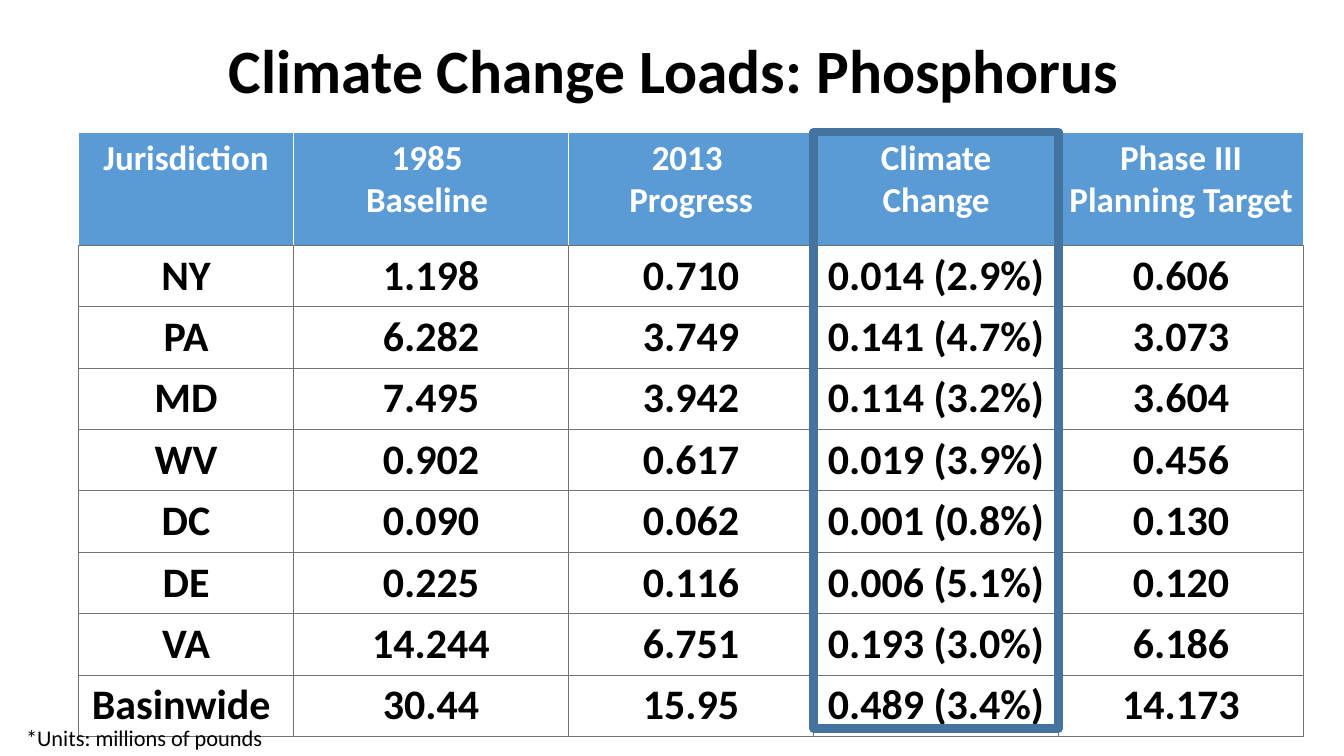
from dataclasses import dataclass

from lxml.etree import SubElement
from pptx import Presentation
from pptx.dml.color import RGBColor
from pptx.enum.shapes import MSO_SHAPE
from pptx.enum.text import MSO_ANCHOR, PP_ALIGN
from pptx.oxml.ns import qn
from pptx.slide import Slide
from pptx.table import _Cell as Cell
from pptx.text.text import TextFrame
from pptx.util import Pt


@dataclass(frozen=True)
class Theme:
    font: str = "Calibri"
    black: str = "000000"
    white: str = "FFFFFF"
    blue: str = "5B9BD5"
    frame: str = "43739E"
    grid: str = "767171"
    title: float = 44
    head: float = 25
    body: float = 30
    note: float = 16


@dataclass(frozen=True)
class Box:
    left: float
    top: float
    width: float
    height: float

    def pts(self) -> tuple[Pt, Pt, Pt, Pt]:
        return Pt(self.left), Pt(self.top), Pt(self.width), Pt(self.height)


@dataclass(frozen=True)
class Style:
    size: float
    color: str
    bold: bool = True
    align: PP_ALIGN = PP_ALIGN.CENTER
    spacing: float = 1.0


@dataclass(frozen=True)
class Edge:
    color: str
    width: float


@dataclass(frozen=True)
class Look:
    text: Style
    fill: str
    edges: dict[str, Edge]


@dataclass(frozen=True)
class Label:
    text: str
    box: Box
    style: Style
    anchor: MSO_ANCHOR


THEME = Theme()
WHITE = Edge(THEME.white, 1)
GRID = Edge(THEME.grid, 0.5)
HEAD = Look(Style(THEME.head, THEME.white), THEME.blue,
            {"L": WHITE, "R": WHITE, "T": WHITE, "B": GRID})
BODY = Look(Style(THEME.body, THEME.black), THEME.white,
            {side: GRID for side in "LRTB"})

COLS = [153.4, 196.6, 175, 175, 175]
HEAD_H, ROW_H = 80.8, 40.3
ROWS = [
    ["Jurisdiction", "1985 \nBaseline ", "2013 \nProgress",
     "Climate Change", "Phase III Planning Target"],
    ["NY", "1.198", "0.710", "0.014 (2.9%)", "0.606"],
    ["PA", "6.282", "3.749", "0.141 (4.7%)", "3.073"],
    ["MD", "7.495", "3.942", "0.114 (3.2%)", "3.604"],
    ["WV", "0.902", "0.617", "0.019 (3.9%)", "0.456"],
    ["DC", "0.090", "0.062", "0.001 (0.8%)", "0.130"],
    ["DE", "0.225", "0.116", "0.006 (5.1%)", "0.120"],
    ["VA", "14.244", "6.751", "0.193 (3.0%)", "6.186"],
    ["Basinwide ", "30.44", "15.95", "0.489 (3.4%)", "14.173"],
]
GRID_BOX = Box(56.2, 94.3, sum(COLS), HEAD_H + ROW_H * (len(ROWS) - 1))
FOCUS = ROWS[0].index("Climate Change")

LABELS = [
    Label("Climate Change Loads: Phosphorus", Box(67.7, 0, 828, 104.4),
          Style(THEME.title, THEME.black, spacing=0.9), MSO_ANCHOR.MIDDLE),
    Label("*Units: millions of pounds", Box(11.5, 513.4, 229.7, 26.6),
          Style(THEME.note, THEME.black, False, PP_ALIGN.LEFT), MSO_ANCHOR.TOP),
]


def write(frame: TextFrame, text: str, style: Style) -> None:
    """Fill a text frame with one paragraph for each line of text."""
    for i, line in enumerate(text.split("\n")):
        para = frame.add_paragraph() if i else frame.paragraphs[0]
        para.alignment = style.align
        para.line_spacing = style.spacing
        run = para.add_run()
        run.text = line
        run.font.name = THEME.font
        run.font.size = Pt(style.size)
        run.font.bold = style.bold
        run.font.color.rgb = RGBColor.from_string(style.color)


def dress(cell: Cell, look: Look) -> None:
    """Set a cell's borders, then its fill, in the order the schema asks."""
    props = cell._tc.get_or_add_tcPr()
    for side, edge in look.edges.items():
        line = SubElement(props, qn(f"a:ln{side}"), w=str(Pt(edge.width)))
        fill = SubElement(line, qn("a:solidFill"))
        SubElement(fill, qn("a:srgbClr"), val=edge.color)
    cell.fill.solid()
    cell.fill.fore_color.rgb = RGBColor.from_string(look.fill)


def add_grid(slide: Slide) -> None:
    table = slide.shapes.add_table(len(ROWS), len(COLS), *GRID_BOX.pts()).table
    table.horz_banding = False
    for col, width in zip(table.columns, COLS):
        col.width = Pt(width)
    for r, row in enumerate(ROWS):
        look = BODY if r else HEAD
        table.rows[r].height = Pt(ROW_H if r else HEAD_H)
        for c, text in enumerate(row):
            cell = table.cell(r, c)
            dress(cell, look)
            write(cell.text_frame, text, look.text)


def add_label(slide: Slide, label: Label) -> None:
    frame = slide.shapes.add_textbox(*label.box.pts()).text_frame
    frame.word_wrap = True
    frame.vertical_anchor = label.anchor
    write(frame, label.text, label.style)


def add_frame(slide: Slide) -> None:
    """Outline the column in focus."""
    box = Box(GRID_BOX.left + sum(COLS[:FOCUS]), GRID_BOX.top,
              COLS[FOCUS], GRID_BOX.height + 23)
    box = Box(box.left, box.top, box.width, 426.2)
    shape = slide.shapes.add_shape(MSO_SHAPE.RECTANGLE, *box.pts())
    shape.shadow.inherit = False
    shape.fill.background()
    shape.line.color.rgb = RGBColor.from_string(THEME.frame)
    shape.line.width = Pt(6)


def main() -> None:
    deck = Presentation()
    deck.slide_width, deck.slide_height = Pt(960), Pt(540)
    slide = deck.slides.add_slide(deck.slide_layouts[6])
    add_grid(slide)
    for label in LABELS:
        add_label(slide, label)
    add_frame(slide)
    deck.save("out.pptx")


if __name__ == "__main__":
    main()
